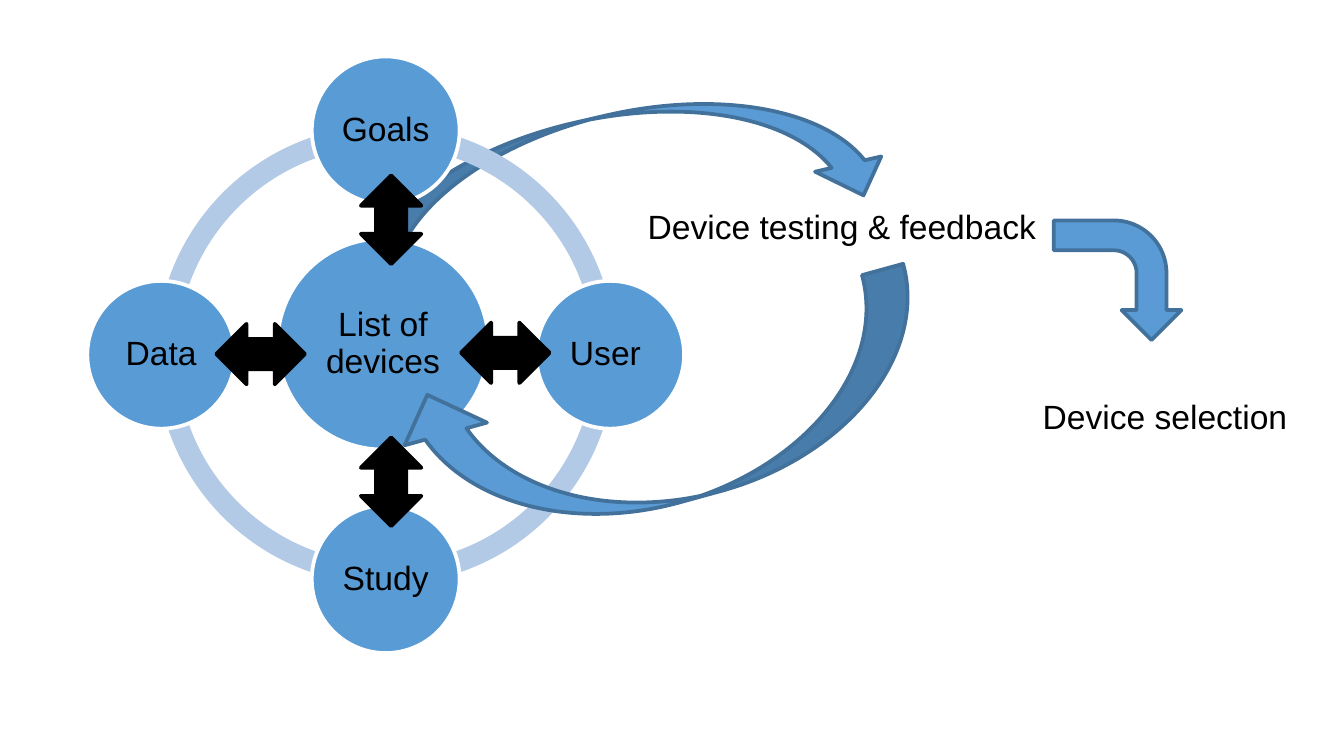
from pptx import Presentation
from pptx.dml.color import RGBColor
from pptx.enum.shapes import MSO_SHAPE as Shape
from pptx.enum.text import MSO_ANCHOR as Anchor, PP_ALIGN as Align
from pptx.util import Inches, Pt

COLORS = {
    "arrow": "5B9BD5",
    "arrow_edge": "42719B",
    "circle": "599BD5",
    "ring": "B3CAE7",
    "white": "FFFFFF",
    "black": "000000",
}
SLIDE_WIDTH = 10
SLIDE_HEIGHT = SLIDE_WIDTH * 9 / 16
CENTER_X, CENTER_Y = 2.87, 2.64
RING_SIZE = 3.42
ORBIT = 1.67


def add_figure(page, kind, bounds, fill, edge=None, rotation=0, adjustments=()):
    """Add a filled preset shape with an optional outline."""
    figure = page.shapes.add_shape(kind, *map(Inches, bounds))
    figure.shadow.inherit = False
    figure.rotation = rotation
    for index, value in enumerate(adjustments):
        figure.adjustments[index] = value
    figure.fill.solid()
    figure.fill.fore_color.rgb = RGBColor.from_string(COLORS[fill])
    if edge:
        figure.line.color.rgb = RGBColor.from_string(COLORS[edge])
        figure.line.width = Pt(2)
    else:
        figure.line.fill.background()
    return figure


def write_text(box, text):
    """Put one wrapped paragraph in the slide's text style into a shape."""
    frame = box.text_frame
    frame.word_wrap = True
    frame.text = text
    para = frame.paragraphs[0]
    for span in para.runs:
        span.font.name = "Arial"
        span.font.size = Pt(18)
        span.font.color.rgb = RGBColor.from_string(COLORS["black"])
    return para


def add_ring(page):
    """Add the ring as four quarter arcs around the center."""
    corner = CENTER_X - RING_SIZE / 2, CENTER_Y - RING_SIZE / 2
    for start, end in ((108, 162), (54, 108), (0, 54), (162, 0)):
        add_figure(page, Shape.BLOCK_ARC, (*corner, RING_SIZE, RING_SIZE),
                   "ring", adjustments=(start, end, 0.046))


def add_circle(page, text, x, y, size):
    """Add a labelled circle centered on a point."""
    circle = add_figure(page, Shape.OVAL, (x - size / 2, y - size / 2, size, size),
                        "circle", "white")
    para = write_text(circle, text)
    para.alignment = Align.CENTER
    para.line_spacing = 0.9
    frame = circle.text_frame
    frame.vertical_anchor = Anchor.MIDDLE
    frame.margin_left = frame.margin_right = Inches(0.02)
    frame.margin_top = frame.margin_bottom = Inches(0.02)


def add_label(page, text, bounds):
    """Add a free-standing step label."""
    box = page.shapes.add_textbox(*map(Inches, bounds))
    write_text(box, text)


def add_flow_arrow(page, kind, bounds, rotation, adjustments):
    """Add a blue arrow between process steps."""
    add_figure(page, kind, bounds, "arrow", "arrow_edge", rotation, adjustments)


def add_link_arrow(page, left, top, rotation):
    """Add a black double arrow between the hub and a factor."""
    add_figure(page, Shape.LEFT_RIGHT_ARROW, (left, top, 0.66, 0.45),
               "black", "black", rotation, (0.5, 0.5))


def main():
    """Build and save the device selection slide."""
    deck = Presentation()
    deck.slide_width, deck.slide_height = Inches(SLIDE_WIDTH), Inches(SLIDE_HEIGHT)
    page = deck.slides.add_slide(deck.slide_layouts[6])

    curve = (0.25, 0.5, 0.25)
    add_flow_arrow(page, Shape.CURVED_LEFT_ARROW, (4.06, -0.68, 1.01, 4.09), 257, curve)
    add_ring(page)
    add_circle(page, "List of devices", CENTER_X - 0.02, CENTER_Y - 0.08, 1.57)
    factors = (("Goals", 0, -1), ("User ", 1, 0), ("Study", 0, 1), ("Data", -1, 0))
    for text, across, down in factors:
        add_circle(page, text, CENTER_X + across * ORBIT, CENTER_Y + down * ORBIT, 1.1)

    add_label(page, "Device testing & feedback", (4.72, 1.48, 3.12, 0.4))
    add_flow_arrow(page, Shape.CURVED_LEFT_ARROW, (4.33, 1.11, 1.27, 3.99), 74.6, curve)
    add_label(page, "Device selection", (7.66, 2.9, 2.04, 0.4))
    add_flow_arrow(page, Shape.BENT_ARROW, (7.87, 1.61, 0.89, 0.95), 90,
                   (0.25, 0.25, 0.25, 0.44))

    for left, top, rotation in ((1.61, 2.41, 0), (2.58, 3.36, 270),
                                (2.58, 1.41, 270), (3.43, 2.4, 0)):
        add_link_arrow(page, left, top, rotation)

    deck.save("out.pptx")


if __name__ == "__main__":
    main()
